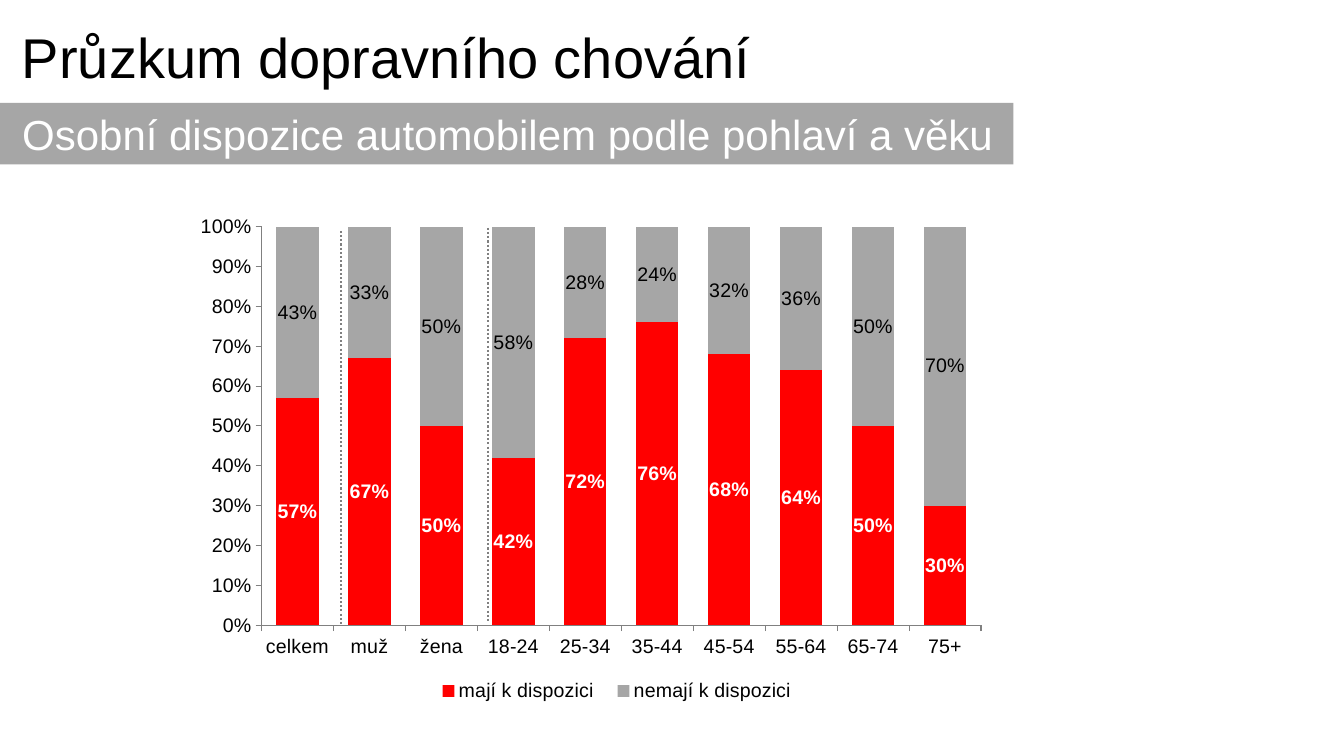
from dataclasses import dataclass

from lxml import etree
from pptx import Presentation
from pptx.chart.data import CategoryChartData
from pptx.dml.color import RGBColor
from pptx.enum.chart import XL_CHART_TYPE as ChartType
from pptx.enum.chart import XL_LEGEND_POSITION as LegendPos
from pptx.enum.chart import XL_TICK_MARK as Tick
from pptx.enum.dml import MSO_LINE
from pptx.enum.shapes import MSO_CONNECTOR as Connector
from pptx.enum.shapes import MSO_SHAPE as Shape
from pptx.enum.text import MSO_ANCHOR as Anchor
from pptx.enum.text import PP_ALIGN as Align
from pptx.oxml.ns import qn
from pptx.util import Pt

EMU_PER_PX = 9144


@dataclass(frozen=True)
class Theme:
    """Colours, fonts and type sizes of the slide."""

    black: RGBColor = RGBColor(0, 0, 0)
    white: RGBColor = RGBColor(255, 255, 255)
    red: RGBColor = RGBColor(255, 0, 0)
    grey: RGBColor = RGBColor(0xA6, 0xA6, 0xA6)
    rule: RGBColor = RGBColor(0x80, 0x80, 0x80)
    font: str = "Arial"
    chart_font: str = "Cabin"
    title: int = 40
    subtitle: int = 30
    chart: int = 14


THEME = Theme()
AGES = ["18-24", "25-34", "35-44", "45-54", "55-64", "65-74", "75+"]
CATEGORIES = ["celkem", "muž", "žena"] + AGES
AVAILABLE = [0.57, 0.67, 0.5, 0.42, 0.72, 0.76, 0.68, 0.64, 0.5, 0.3]


def px(*lengths):
    """Turn pixel lengths into EMU."""
    return [n * EMU_PER_PX for n in lengths]


def style_font(font, size, color, bold=False, name=THEME.font):
    """Apply size, colour, weight and face to a font."""
    font.size, font.bold, font.name = Pt(size), bold, name
    font.color.rgb = color


def write_line(sp, text, size, color):
    """Put one left-aligned line of text in a shape."""
    tf = sp.text_frame
    tf.text = text
    tf.word_wrap = False
    tf.vertical_anchor = Anchor.MIDDLE
    p = tf.paragraphs[0]
    p.alignment = Align.LEFT
    style_font(p.runs[0].font, size, color)


def add_title(slide, text, box):
    """Add the slide title."""
    write_line(slide.shapes.add_textbox(*px(*box)), text, THEME.title, THEME.black)


def add_band(slide, text, box, inset):
    """Add the filled subtitle band."""
    sp = slide.shapes.add_shape(Shape.RECTANGLE, *px(*box))
    sp.shadow.inherit = False
    sp.fill.solid()
    sp.fill.fore_color.rgb = THEME.grey
    sp.line.fill.background()
    write_line(sp, text, THEME.subtitle, THEME.white)
    sp.text_frame.margin_left = px(inset)[0]


def set_layout(element, before, x, y, w, h, inner=False):
    """Place a chart part by fractions of the chart area."""
    for old in element.findall(qn("c:layout")):
        element.remove(old)
    layout = etree.Element(qn("c:layout"))
    manual = etree.SubElement(layout, qn("c:manualLayout"))
    settings = [("layoutTarget", "inner")] if inner else []
    settings += [("xMode", "edge"), ("yMode", "edge")]
    settings += [("x", x), ("y", y), ("w", w), ("h", h)]
    for tag, value in settings:
        etree.SubElement(manual, qn(f"c:{tag}")).set("val", str(value))
    element.find(qn(before)).addprevious(layout)


def style_axis(axis):
    """Give an axis outside ticks, a grey line and plain labels."""
    axis.has_major_gridlines = False
    axis.major_tick_mark, axis.minor_tick_mark = Tick.OUTSIDE, Tick.NONE
    axis.format.line.color.rgb = THEME.rule
    style_font(axis.tick_labels.font, THEME.chart, THEME.black)


def style_series(series, fill, label_color, bold):
    """Colour a series and show its percentages."""
    series.format.fill.solid()
    series.format.fill.fore_color.rgb = fill
    labels = series.data_labels
    labels.show_value = True
    labels.number_format, labels.number_format_is_linked = "0%", False
    style_font(labels.font, THEME.chart, label_color, bold)


def add_stacked_chart(slide, box):
    """Add the chart of car availability by sex and age."""
    data = CategoryChartData(number_format="0%")
    data.categories = CATEGORIES
    data.add_series("mají k dispozici", AVAILABLE)
    data.add_series("nemají k dispozici", [round(1 - v, 2) for v in AVAILABLE])
    frame = slide.shapes.add_chart(ChartType.COLUMN_STACKED_100, *px(*box), data)
    chart = frame.chart
    chart.has_title = False
    style_font(chart.font, THEME.chart, THEME.black, name=THEME.chart_font)

    plot = chart.plots[0]
    plot.gap_width, plot.overlap, plot.vary_by_categories = 70, 100, False
    style_series(plot.series[0], THEME.red, THEME.white, True)
    style_series(plot.series[1], THEME.grey, THEME.black, False)

    style_axis(chart.category_axis)
    axis = chart.value_axis
    style_axis(axis)
    axis.minimum_scale, axis.maximum_scale, axis.major_unit = 0, 1, 0.1
    axis.tick_labels.number_format = "0%"
    axis.tick_labels.number_format_is_linked = False

    chart.has_legend = True
    legend = chart.legend
    legend.position, legend.include_in_layout = LegendPos.BOTTOM, False
    style_font(legend.font, THEME.chart, THEME.black)
    set_layout(legend._element, "c:overlay", 0.28, 0.91, 0.48, 0.07)
    plot_area = chart._chartSpace.chart.plotArea
    set_layout(plot_area, "c:barChart", 0.075, 0.054, 0.901, 0.765, inner=True)


def add_divider(slide, x, top, bottom):
    """Add a dotted vertical line between groups of columns."""
    line = slide.shapes.add_connector(Connector.STRAIGHT, *px(x, top, x, bottom))
    line.line.color.rgb = THEME.rule
    line.line.width = Pt(1.5)
    line.line.dash_style = MSO_LINE.ROUND_DOT
    etree.SubElement(line._element.spPr, qn("a:effectLst"))


def main():
    """Build and save the slide."""
    prs = Presentation()
    prs.slide_width, prs.slide_height = px(1333, 750)
    slide = prs.slides.add_slide(prs.slide_layouts[6])
    add_title(slide, "Průzkum dopravního chování", (12, 17, 980, 77))
    add_band(slide, "Osobní dispozice automobilem podle pohlaví a věku",
             (0, 102, 1005, 61), 22)
    add_stacked_chart(slide, (199, 197, 793, 517))
    add_divider(slide, 338, 229, 621)
    add_divider(slide, 484, 226, 618)
    prs.save("out.pptx")


if __name__ == "__main__":
    main()
